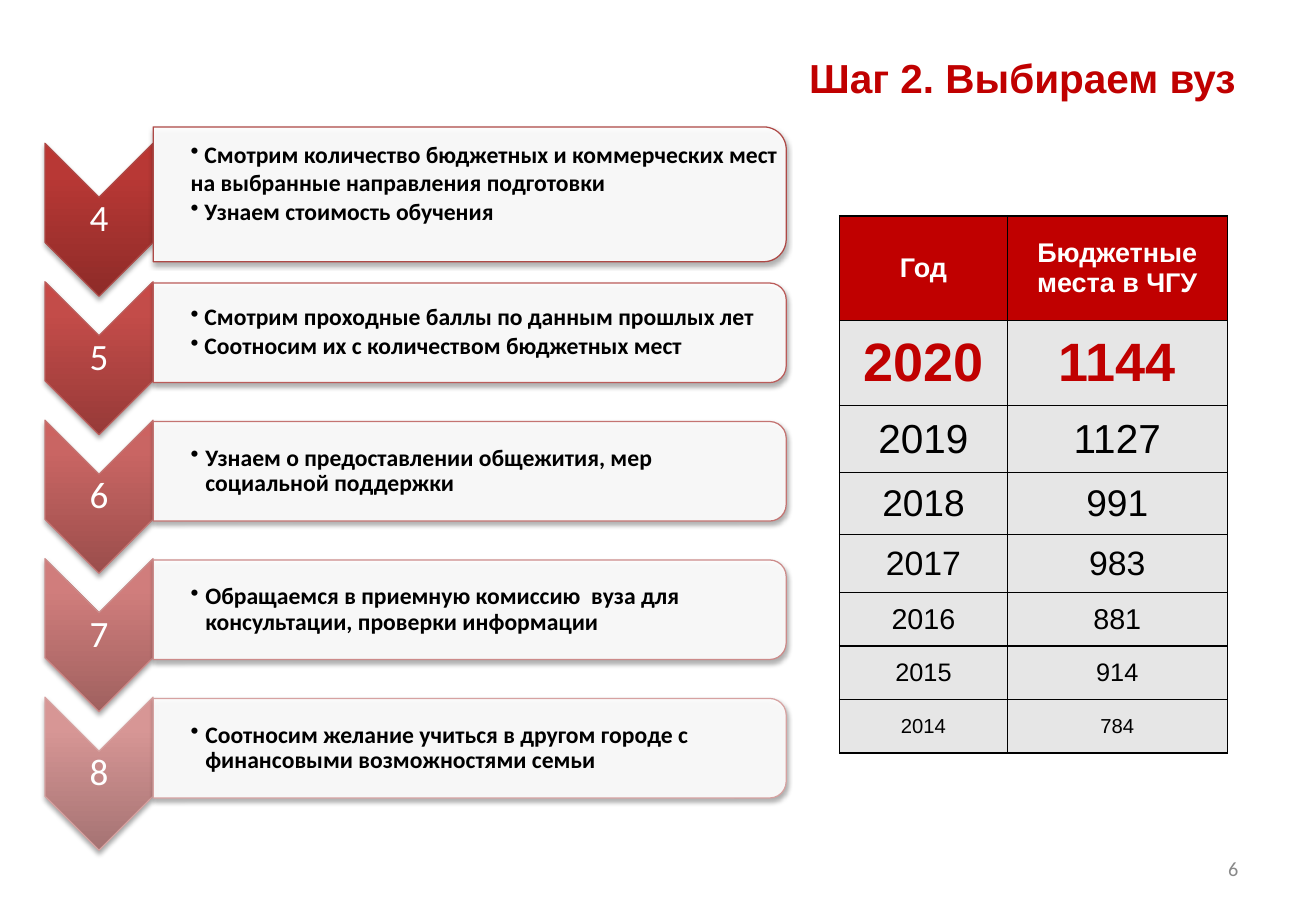
from pptx import Presentation
from pptx.dml.color import RGBColor
from pptx.enum.shapes import MSO_SHAPE
from pptx.enum.text import MSO_ANCHOR, PP_ALIGN
from pptx.oxml import parse_xml
from pptx.oxml.ns import nsdecls, qn
from pptx.util import Inches, Pt

TITLE = "Шаг 2. Выбираем вуз"
PAGE_NUMBER = "6"
STEPS = [
    {"number": "4", "line": "AE4946", "gradient": ("8E2B28", "B83835", "BB3632"),
     "height": 1.11, "spacing": 1.0, "after": 0, "hanging": 0, "text_top": 1.09,
     "points": [" Смотрим количество бюджетных и коммерческих мест на выбранные направления подготовки",
                " Узнаем стоимость обучения"]},
    {"number": "5", "line": "BB5C5A", "gradient": ("973A38", "C34C49", "C74A47"), "hanging": 0,
     "points": [" Смотрим проходные баллы по данным прошлых лет",
                " Соотносим их с количеством бюджетных мест"]},
    {"number": "6", "line": "C47472", "gradient": ("9B4E4C", "C96563", "CC6361"),
     "points": ["Узнаем о предоставлении общежития, мер социальной поддержки"]},
    {"number": "7", "line": "CC8B8A", "gradient": ("A0615F", "D07D7C", "D27C7B"),
     "points": ["Обращаемся в приемную комиссию  вуза для консультации, проверки информации"]},
    {"number": "8", "line": "D6A2A1", "gradient": ("A57373", "D79695", "D99594"),
     "points": ["Соотносим желание учиться в другом городе с финансовыми возможностями семьи"]},
]
PLACES = [
    ("Год", "Бюджетные места в ЧГУ"), ("2020", "1144"), ("2019", "1127"), ("2018", "991"),
    ("2017", "983"), ("2016", "881"), ("2015", "914"), ("2014", "784"),
]
COLUMN_WIDTHS = [1.38, 1.81]
ROW_HEIGHTS = [0.86, 0.7, 0.55, 0.51, 0.48, 0.44, 0.44, 0.44]

THEME = {
    "red": "C00000", "white": "FFFFFF", "black": "000000", "grey": "898989", "cell": "E6E6E6",
    "heading": "Arial", "body": "Calibri",
    "title": 24, "number": 22, "point": 14, "page": 12,
    "rows": [16, 32, 24, 22, 20, 17, 15, 12],
}
STEP_PITCH = 1.14
CHEVRON_LEFT, CHEVRON_TOP, CHEVRON_WIDTH, CHEVRON_HEIGHT = 0.37, 1.18, 0.89, 1.26
PANEL_LEFT, PANEL_WIDTH, PANEL_HEIGHT = 1.26, 5.21, 0.82
FIRST_PANEL_CENTER = 1.6


def format_text(paragraph, size, color, font="body", bold=False, **values):
    """Apply paragraph and font formatting."""
    for name, value in values.items():
        setattr(paragraph, name, value)
    for run in paragraph.runs:
        for name, value in {"name": THEME[font], "size": Pt(size), "bold": bold}.items():
            setattr(run.font, name, value)
        run.font.color.rgb = RGBColor.from_string(THEME[color])


def format_frame(frame, left_inset=0.02, inset=0.02):
    """Set wrapping, middle anchoring and insets of a text frame."""
    values = {"word_wrap": True, "vertical_anchor": MSO_ANCHOR.MIDDLE,
              "margin_left": Inches(left_inset)}
    values.update({f"margin_{side}": Inches(inset) for side in ("top", "right", "bottom")})
    for name, value in values.items():
        setattr(frame, name, value)


def add_text_frame(slide, text, left, top, width, height, **insets):
    """Add a text box and return its frame."""
    frame = slide.shapes.add_textbox(*map(Inches, (left, top, width, height))).text_frame
    frame.text = text
    format_frame(frame, **insets)
    return frame


def add_turned_shape(slide, kind, left, top, width, height, fill, line):
    """Add a shape turned a quarter clockwise that covers the given area."""
    center_x, center_y = left + width / 2, top + height / 2
    area = (center_x - height / 2, center_y - width / 2, height, width)
    shape = slide.shapes.add_shape(kind, *map(Inches, area))
    shape.rotation = 90
    properties = shape._element.spPr
    properties.append(parse_xml(fill))
    shape.line.color.rgb = RGBColor.from_string(line)
    shape.line.width = Pt(0.75)
    shape.shadow.inherit = False
    properties.find(qn("a:effectLst")).append(parse_xml(
        f'<a:outerShdw {nsdecls("a")} blurRad="{Pt(3.1)}" dist="{Pt(1.8)}" dir="5400000" '
        'rotWithShape="0"><a:srgbClr val="000000"><a:alpha val="35000"/></a:srgbClr></a:outerShdw>'))


def gradient_fill(colors):
    """Return a gradient that runs upwards."""
    stops = "".join(f'<a:gs pos="{position}"><a:srgbClr val="{color}"/></a:gs>'
                    for position, color in zip((0, 80000, 100000), colors))
    return (f'<a:gradFill {nsdecls("a")} rotWithShape="0"><a:gsLst>{stops}</a:gsLst>'
            '<a:lin ang="16200000" scaled="0"/></a:gradFill>')


def add_step(slide, index, step):
    """Add one chevron with its number and text panel."""
    offset = index * STEP_PITCH
    top = CHEVRON_TOP + offset
    add_turned_shape(slide, MSO_SHAPE.CHEVRON, CHEVRON_LEFT, top, CHEVRON_WIDTH, CHEVRON_HEIGHT,
                     gradient_fill(step["gradient"]), step["line"])
    frame = add_text_frame(slide, step["number"], CHEVRON_LEFT, top + 0.44, CHEVRON_WIDTH, 0.38)
    format_text(frame.paragraphs[0], THEME["number"], "white", alignment=PP_ALIGN.CENTER,
                line_spacing=0.9, space_after=Pt(7.7))

    height = step.get("height", PANEL_HEIGHT)
    panel_top = FIRST_PANEL_CENTER + offset - height / 2
    panel_fill = (f'<a:solidFill {nsdecls("a")}><a:srgbClr val="{THEME["white"]}">'
                  '<a:alpha val="90000"/></a:srgbClr></a:solidFill>')
    add_turned_shape(slide, MSO_SHAPE.ROUND_2_SAME_RECTANGLE, PANEL_LEFT, panel_top, PANEL_WIDTH,
                     height, panel_fill, step["line"])
    frame = add_text_frame(slide, "\n".join(step["points"]), PANEL_LEFT,
                           step.get("text_top", panel_top), PANEL_WIDTH - 0.04, PANEL_HEIGHT,
                           left_inset=0.31, inset=0.01)
    hanging = Inches(step.get("hanging", 0.12))
    for paragraph in frame.paragraphs:
        properties = paragraph._p.get_or_add_pPr()
        properties.set("marL", str(hanging))
        properties.set("indent", str(-hanging))
        properties.append(parse_xml(f'<a:buChar {nsdecls("a")} char="•"/>'))
        format_text(paragraph, THEME["point"], "black", bold=True,
                    line_spacing=step.get("spacing", 0.9), space_after=Pt(step.get("after", 2)))


def add_places_table(slide):
    """Add the table of state-funded places by year."""
    area = (6.91, 1.78, sum(COLUMN_WIDTHS), sum(ROW_HEIGHTS))
    table = slide.shapes.add_table(len(PLACES), len(COLUMN_WIDTHS), *map(Inches, area)).table
    for column, width in zip(table.columns, COLUMN_WIDTHS):
        column.width = Inches(width)
    for index, (row, values) in enumerate(zip(table.rows, PLACES)):
        row.height = Inches(ROW_HEIGHTS[index])
        color = ("white", "red")[index] if index < 2 else "black"
        for cell, value in zip(row.cells, values):
            cell.text = value
            cell.vertical_anchor = MSO_ANCHOR.MIDDLE
            format_text(cell.text_frame.paragraphs[0], THEME["rows"][index], color, "heading",
                        index < 2, alignment=PP_ALIGN.CENTER)
            properties = cell._tc.get_or_add_tcPr()
            for side in ("lnL", "lnR", "lnT", "lnB"):
                properties.append(parse_xml(
                    f'<a:{side} {nsdecls("a")} w="{Pt(1)}"><a:solidFill>'
                    f'<a:srgbClr val="{THEME["black"]}"/></a:solidFill></a:{side}>'))
            cell.fill.solid()
            cell.fill.fore_color.rgb = RGBColor.from_string(THEME["cell" if index else "red"])


def main():
    """Build the slide and save it."""
    presentation = Presentation()
    presentation.slide_width, presentation.slide_height = Inches(10.83), Inches(7.5)
    slide = presentation.slides.add_slide(presentation.slide_layouts[5])
    title = slide.shapes.title
    area = {"left": 0.61, "top": 0.34, "width": 9.66, "height": 0.6}
    for name, value in area.items():
        setattr(title, name, Inches(value))
    title.text = TITLE
    format_frame(title.text_frame, left_inset=0.1, inset=0.1)
    format_text(title.text_frame.paragraphs[0], THEME["title"], "red", "heading", True,
                alignment=PP_ALIGN.RIGHT)

    for index, step in enumerate(STEPS):
        add_step(slide, index, step)
    add_places_table(slide)

    frame = add_text_frame(slide, PAGE_NUMBER, 7.76, 6.95, 2.53, 0.4, left_inset=0.1, inset=0.1)
    format_text(frame.paragraphs[0], THEME["page"], "grey", alignment=PP_ALIGN.RIGHT)
    presentation.save("out.pptx")


if __name__ == "__main__":
    main()
